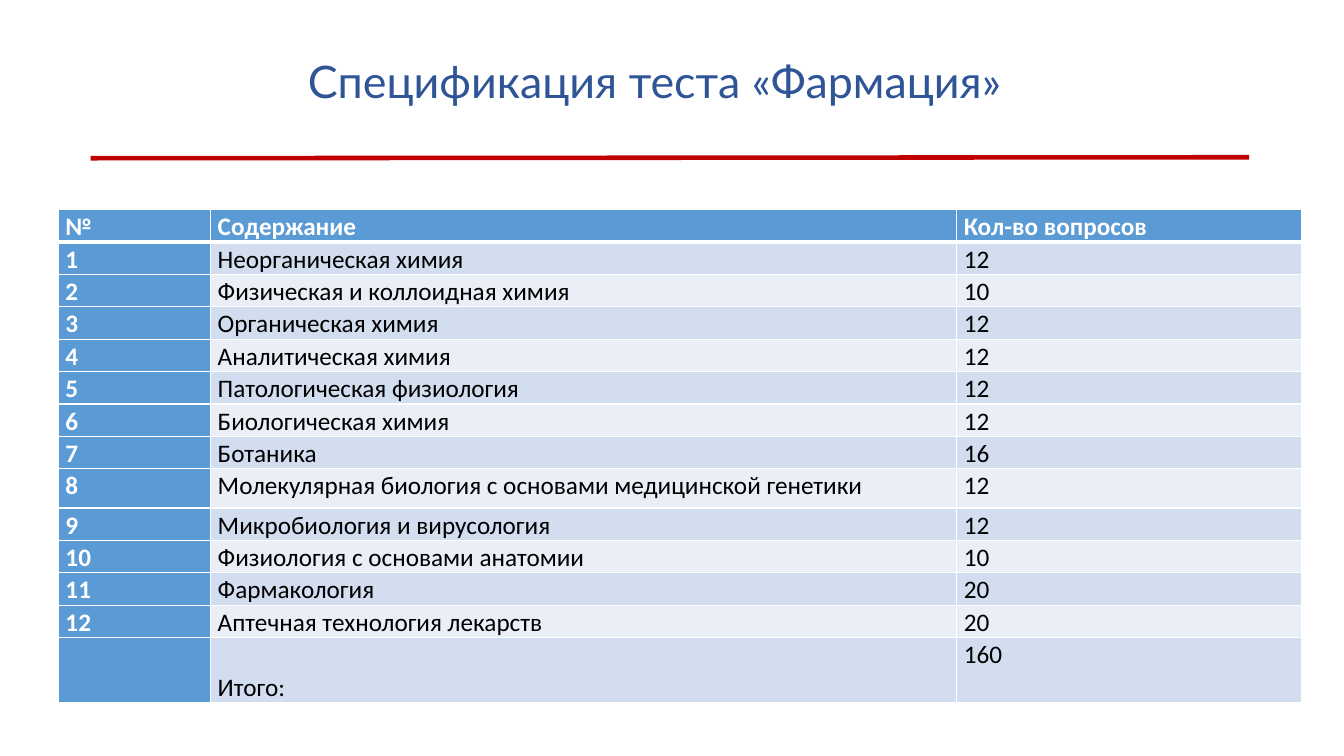
from pptx import Presentation
from pptx.dml.color import RGBColor as RGB
from pptx.enum.shapes import MSO_CONNECTOR as CONN
from pptx.enum.text import MSO_ANCHOR as ANCHOR, PP_ALIGN as ALIGN
from pptx.oxml.ns import qn
from pptx.util import Emu, Pt
from lxml.etree import SubElement

PX = 9144
COLORS = {
    "title": "2F5597", "rule": "C00000", "head": "5B9BD5",
    "odd": "D2DEEF", "even": "EAEFF7", "white": "FFFFFF", "black": "000000",
}
HEADER = ("№", "Содержание", "Кол-во вопросов")
SUBJECTS = [
    ("Неорганическая химия", 12),
    ("Физическая и коллоидная химия", 10),
    ("Органическая химия", 12),
    ("Аналитическая химия", 12),
    ("Патологическая физиология", 12),
    ("Биологическая химия", 12),
    ("Ботаника", 16),
    ("Молекулярная биология с основами медицинской генетики", 12),
    ("Микробиология и вирусология", 12),
    ("Физиология с основами анатомии", 10),
    ("Фармакология", 20),
    ("Аптечная технология лекарств", 20),
]
COL_WIDTHS = (151, 740, 342)
ROW_HEIGHT = 32
TALL_ROWS = {8: 39, 13: 65}


def px(n):
    return Emu(n * PX)


def color(name):
    return RGB.from_string(COLORS[name])


def write(tf, text, *, size=18, font="Calibri", fill="black", bold=False,
          align=ALIGN.LEFT, spacing=1.07):
    p = tf.paragraphs[0]
    p.alignment = align
    p.line_spacing = spacing
    r = p.add_run()
    r.text = text
    r.font.size = Pt(size)
    r.font.name = font
    r.font.bold = bold
    r.font.color.rgb = color(fill)


def add_title(s, text):
    sp = s.shapes.add_textbox(px(58), px(40), px(1183), px(145))
    tf = sp.text_frame
    tf.word_wrap = True
    tf.vertical_anchor = ANCHOR.MIDDLE
    tf.margin_bottom = px(63)
    write(tf, text, size=32, font="Lato", fill="title", align=ALIGN.CENTER, spacing=0.9)


def add_rule(s, x1, y1, x2, y2):
    sp = s.shapes.add_connector(CONN.STRAIGHT, px(x1), px(y1), px(x2), px(y2))
    sp.line.color.rgb = color("rule")
    sp.line.width = Pt(3.25)
    SubElement(sp._element.spPr, qn("a:effectLst"))


def set_borders(cell, top=1, bottom=1):
    tc_pr = cell._tc.get_or_add_tcPr()
    for side, width in (("L", 1), ("R", 1), ("T", top), ("B", bottom)):
        ln = SubElement(tc_pr, qn(f"a:ln{side}"), w=str(Pt(width)))
        SubElement(SubElement(ln, qn("a:solidFill")), qn("a:srgbClr"), val=COLORS["white"])


def format_cell(cell, row, col, text):
    label = row == 0 or col == 0
    set_borders(cell, top=3 if row == 1 else 1, bottom=3 if row == 0 else 1)
    cell.fill.solid()
    cell.fill.fore_color.rgb = color("head" if label else "odd" if row % 2 else "even")
    cell.margin_left = cell.margin_right = px(7)
    cell.margin_top = cell.margin_bottom = 0
    if text:
        write(cell.text_frame, text, fill="white" if label else "black", bold=label)


def add_spec_table(s):
    total = sum(count for _, count in SUBJECTS)
    rows = [HEADER]
    rows += [(str(i), name, str(count)) for i, (name, count) in enumerate(SUBJECTS, 1)]
    rows.append(("", "Итого:", str(total)))
    heights = [TALL_ROWS.get(i, ROW_HEIGHT) for i in range(len(rows))]
    table = s.shapes.add_table(len(rows), len(HEADER), px(58), px(208),
                               px(sum(COL_WIDTHS)), px(sum(heights))).table
    for column, width in zip(table.columns, COL_WIDTHS):
        column.width = px(width)
    for i, values in enumerate(rows):
        table.rows[i].height = px(heights[i])
        for j, text in enumerate(values):
            format_cell(table.cell(i, j), i, j, text)
    table.cell(len(rows) - 1, 1).vertical_anchor = ANCHOR.BOTTOM


def main():
    prs = Presentation()
    prs.slide_width, prs.slide_height = px(1333), px(750)
    s = prs.slides.add_slide(prs.slide_layouts[6])
    add_title(s, "Спецификация теста «Фармация»")
    add_rule(s, 90, 157, 1239, 156)
    add_spec_table(s)
    prs.save("out.pptx")


if __name__ == "__main__":
    main()
